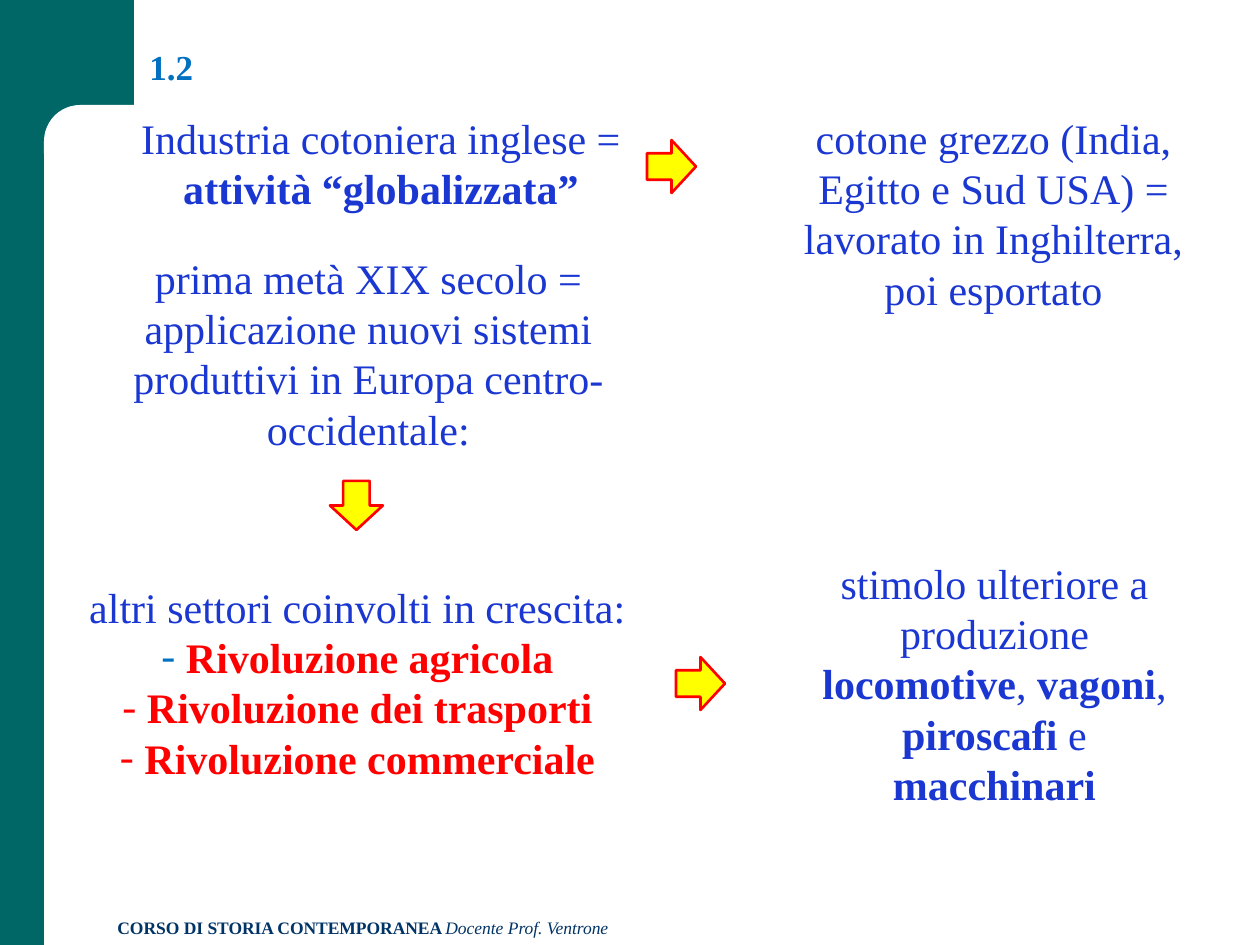
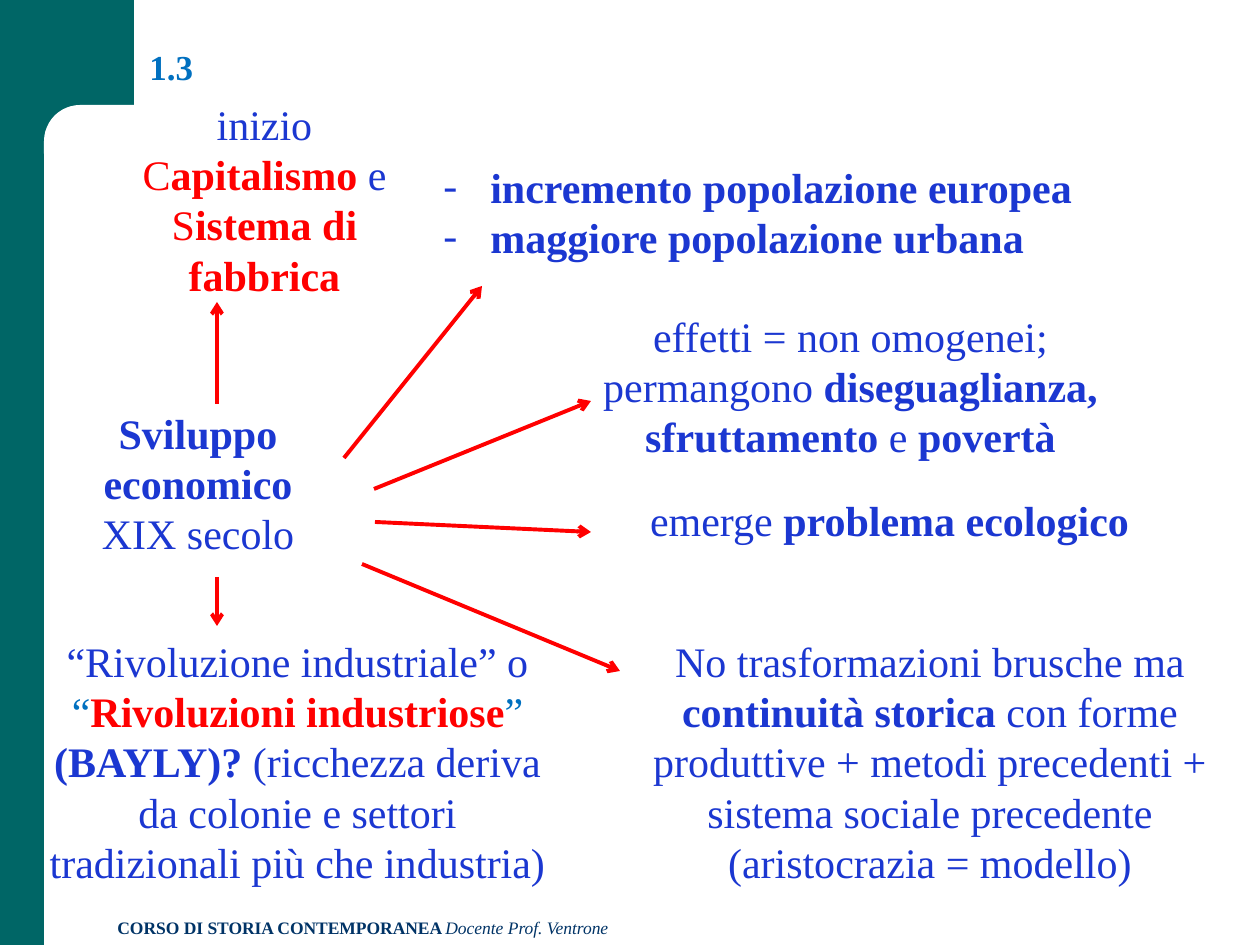
import pptx
import pptx.util
import pptx.dml.color
import pptx.enum.shapes
import pptx.enum.text
import pptx.oxml.ns
from lxml import etree

PX = 914400 / 126
FONT = "Times New Roman"
COLORS = {
    "band": "006666",
    "white": "FFFFFF",
    "footer": "003366",
    "number": "0070C0",
    "text": "1B37D1",
    "red": "FF0000",
    "yellow": "FFFF00",
}
FRAME_FORMAT = {
    "word_wrap": True,
    "auto_size": pptx.enum.text.MSO_AUTO_SIZE.SHAPE_TO_FIT_TEXT,
}
MSO = pptx.enum.shapes.MSO_SHAPE
ALIGN = pptx.enum.text.PP_ALIGN


def px(n):
    return pptx.util.Emu(round(n * PX))


def rgb(name):
    return pptx.dml.color.RGBColor.from_string(COLORS[name])


def set_format(obj, values):
    for name, value in values.items():
        setattr(obj, name, value)


def sub(parent, tag, **attrs):
    return etree.SubElement(parent, pptx.oxml.ns.qn(tag), attrs)


def add_block(slide, kind, box, fill, line=None, adj=None, rotation=0):
    sp = slide.shapes.add_shape(kind, *map(px, box))
    sp.shadow.inherit = False
    sp.rotation = rotation
    sp.fill.solid()
    sp.fill.fore_color.rgb = rgb(fill)
    if line:
        sp.line.color.rgb = rgb(line)
        sp.line.width = pptx.util.Pt(1.5)
    else:
        sp.line.fill.background()
    if adj is not None:
        sp.adjustments[0] = adj


def add_run(p, text, color="text", bold=False, size=24, italic=False):
    r = p.add_run()
    r.text = text
    set_format(r.font, {"name": FONT, "size": pptx.util.Pt(size), "bold": bold, "italic": italic})
    r.font.color.rgb = rgb(color)


def add_dash(p, indent):
    pPr = p._p.get_or_add_pPr()
    pPr.set("marL", str(px(indent)))
    pPr.set("indent", str(px(-indent)))
    sub(pPr, "a:buFont", typeface=FONT)
    sub(pPr, "a:buChar", char="-")


def add_text(slide, box, paragraphs, align=ALIGN.CENTER, dashes_from=None, indent=0):
    tf = slide.shapes.add_textbox(*map(px, box)).text_frame
    set_format(tf, FRAME_FORMAT)
    for i, runs in enumerate(paragraphs):
        p = tf.paragraphs[0] if i == 0 else tf.add_paragraph()
        p.alignment = align
        if dashes_from is not None and i >= dashes_from:
            add_dash(p, indent)
        for run in runs:
            add_run(p, *run)


def add_block_arrow(slide, x, y, rotation=0):
    add_block(slide, MSO.DOWN_ARROW, (x, y, 53, 49), "yellow", "red", rotation=rotation)


def add_arrow(slide, start, end):
    cx = slide.shapes.add_connector(
        pptx.enum.shapes.MSO_CONNECTOR.STRAIGHT, *map(px, start + end))
    cx.line.color.rgb = rgb("red")
    cx.line.width = pptx.util.Pt(2.25)
    sub(cx.line._get_or_add_ln(), "a:tailEnd", type="arrow")
    sub(cx._element.spPr, "a:effectLst")


def add_page(prs, number):
    s = prs.slides.add_slide(prs.slide_layouts[6])
    add_block(s, MSO.RECTANGLE, (0, 0, 44, 945), "band")
    add_block(s, MSO.RECTANGLE, (0, 0, 134, 147), "band")
    add_block(s, MSO.ROUNDED_RECTANGLE, (44, 105, 764, 84), "white", adj=0.43)
    add_text(s, (105, 911, 777, 34), [[
        ("CORSO DI STORIA CONTEMPORANEA ", "footer", True, 10),
        ("Docente Prof. Ventrone", "footer", False, 10, True),
    ]], ALIGN.LEFT)
    add_text(s, (137, 39, 79, 55), [[(number, "number", True, 20)]], ALIGN.LEFT)
    return s


def build_cotton(prs):
    s = add_page(prs, "1.2")
    add_text(s, (78, 246, 581, 217), [[
        ("prima metà XIX secolo = applicazione nuovi sistemi produttivi "
         "in Europa centro-occidentale:",),
    ]])
    add_text(s, (793, 551, 403, 267), [[
        ("stimolo ulteriore a produzione ",), ("locomotive", "text", True), (", ",),
        ("vagoni", "text", True), (", ",), ("piroscafi", "text", True), (" e ",),
        ("macchinari", "text", True),
    ]])
    revolutions = [
        ("number", "Rivoluzione agricola"),
        ("red", "Rivoluzione dei trasporti"),
        ("red", "Rivoluzione commerciale"),
    ]
    add_text(s, (57, 575, 601, 217),
             [[("altri settori coinvolti in crescita:",)]]
             + [[(" ", dash), (name, "red", True)] for dash, name in revolutions],
             dashes_from=1)
    add_text(s, (115, 106, 532, 115), [[
        ("Industria cotoniera inglese =",), (" attività “globalizzata”", "text", True),
    ]])
    add_text(s, (767, 106, 453, 217), [[
        ("cotone grezzo (India, Egitto e Sud USA) = lavorato in Inghilterra, poi esportato",),
    ]])
    add_block_arrow(s, 330, 481)
    add_block_arrow(s, 645, 142, 270)
    add_block_arrow(s, 674, 659, 270)


def build_development(prs):
    s = add_page(prs, "1.3")
    add_text(s, (55, 401, 286, 165), [[
        ("Sviluppo economico", "text", True), (" XIX secolo",),
    ]])
    add_text(s, (97, 92, 335, 217), [[
        ("inizio ",), ("C", "red"), ("apitalismo ", "red", True), ("e ",),
        ("S", "red"), ("istema di fabbrica", "red", True),
    ]])
    add_text(s, (431, 155, 689, 115), [
        [("incremento popolazione europea", "text", True)],
        [("maggiore popolazione urbana", "text", True)],
    ], ALIGN.JUSTIFY, dashes_from=0, indent=47)
    add_text(s, (609, 488, 561, 63), [[
        ("emerge ",), ("problema ecologico", "text", True),
    ]])
    add_text(s, (570, 304, 561, 165), [[
        ("effetti = non omogenei; permangono ",),
        ("diseguaglianza, sfruttamento ", "text", True), ("e",), (" povertà", "text", True),
    ]])
    add_text(s, (591, 629, 678, 267), [[
        ("No trasformazioni brusche ma ",), ("continuità storica ", "text", True),
        ("con forme produttive + metodi precedenti + sistema sociale precedente "
         "(aristocrazia = modello)",),
    ]])
    add_text(s, (35, 629, 525, 267), [[
        ("“Rivoluzione industriale” o ",), ("“", "number"),
        ("Rivoluzioni industriose", "red", True), ("” ", "number"),
        ("(BAYLY)? ", "text", True),
        ("(ricchezza deriva da colonie e settori tradizionali più che industria)",),
    ]])
    for start, end in [
        ((217, 404), (217, 302)),
        ((344, 458), (482, 286)),
        ((374, 489), (591, 401)),
        ((375, 522), (591, 532)),
        ((362, 564), (620, 671)),
        ((217, 577), (217, 626)),
    ]:
        add_arrow(s, start, end)


def main():
    prs = pptx.Presentation()
    set_format(prs, {"slide_width": px(1260), "slide_height": px(945)})
    build_cotton(prs)
    build_development(prs)
    prs.save("out.pptx")


if __name__ == "__main__":
    main()
